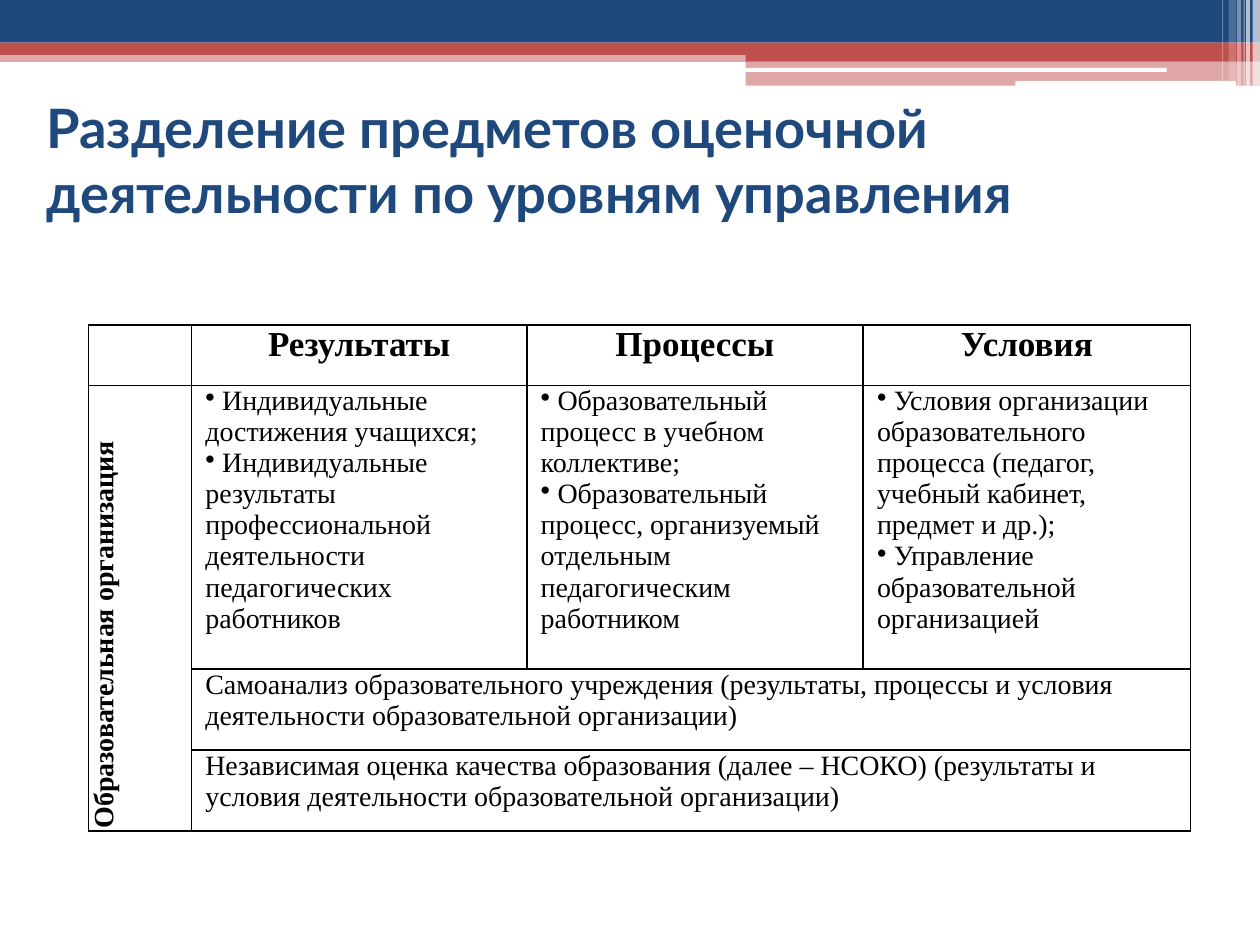
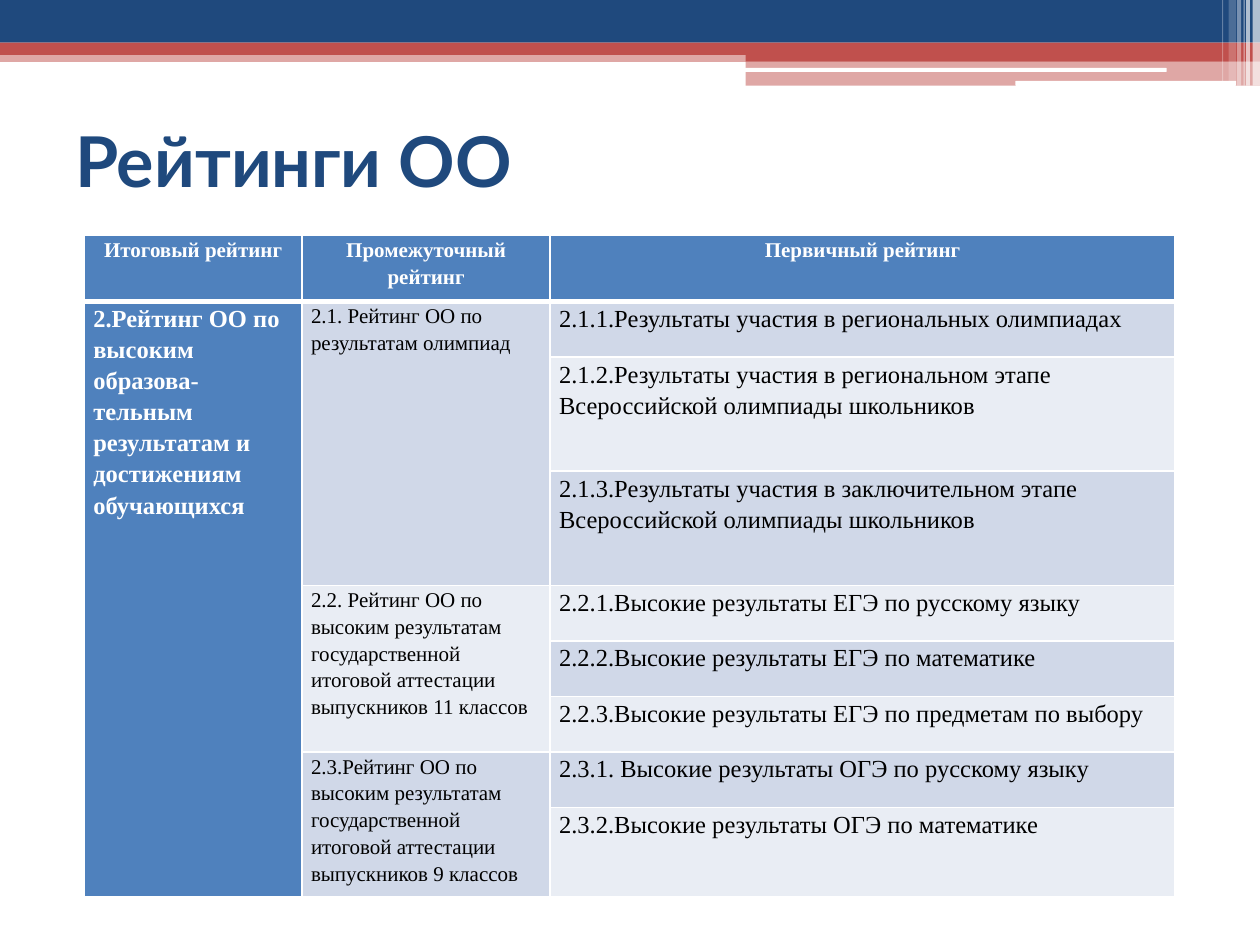
from dataclasses import dataclass
from lxml.etree import SubElement
from pptx import Presentation
from pptx.dml.color import RGBColor
from pptx.enum.shapes import MSO_SHAPE
from pptx.enum.text import MSO_ANCHOR, PP_ALIGN
from pptx.oxml import parse_xml
from pptx.oxml.ns import nsdecls, qn
from pptx.util import Cm, Pt


@dataclass(frozen=True)
class Theme:
    navy: str = "1F497D"
    red: str = "C0504D"
    blue: str = "4F81BD"
    pale: str = "D0D8E8"
    light: str = "E9EDF4"
    white: str = "FFFFFF"
    black: str = "000000"
    head: str = "Lato"
    body: str = "Times New Roman"
    big: int = 40
    title: int = 31
    top: int = 20
    main: int = 16
    text: int = 14
    small: int = 12


T = Theme()


def apply(item, values):
    for name, value in values.items():
        setattr(item, name, value)


def write(par, text, size, font, color, bold):
    run = par.add_run()
    run.text = text
    apply(run.font, {"size": Pt(size), "name": font, "bold": bold})
    run.font.color.rgb = RGBColor.from_string(color)


def bar(slide, box, color, alpha=100, kind=MSO_SHAPE.RECTANGLE):
    shape = slide.shapes.add_shape(kind, *map(Cm, box))
    shape.shadow.inherit = False
    shape.line.fill.background()
    shape.fill.solid()
    shape.fill.fore_color.rgb = RGBColor.from_string(color)
    if alpha < 100:
        node = shape.fill._xPr.find(".//" + qn("a:srgbClr"))
        SubElement(node, qn("a:alpha"), val=str(alpha * 1000))


def band(slide, box):
    left, top, width, high = box
    right = left + width
    half = 10.37
    mid = right - half
    bar(slide, (left, top + 1.02, width, 0.23), T.red, 50)
    bar(slide, (left, top, width, 0.86), T.navy)
    bar(slide, (left, top + 0.86, width, 0.25), T.red)
    bar(slide, (mid, top + 0.99, half, 0.25), T.red)
    bar(slide, (mid, top + 1.24, half, high - 1.24), T.red, 50)
    for gap, drop, wide, thick in ((10.39, 1.37, 8.51, 0.08), (4.93, 1.63, 4.45, 0.1)):
        bar(slide, (right - gap, top + drop, wide, thick), T.white,
            kind=MSO_SHAPE.ROUNDED_RECTANGLE)
    for gap, wide, cut, alpha in (
        (0.15, 0.15, 0, 65), (0.28, 0.08, 0, 65), (0.33, 0.02, 0, 60),
        (0.46, 0.08, 0, 40), (0.63, 0.15, 0.1, 20), (0.76, 0.02, 0.1, 30),
    ):
        bar(slide, (right - gap, top, wide, high - cut), T.white, alpha)


def title(slide, box, text, size):
    frame = slide.shapes.add_textbox(*map(Cm, box)).text_frame
    apply(frame, {"word_wrap": True, "vertical_anchor": MSO_ANCHOR.MIDDLE})
    write(frame.paragraphs[0], text, size, T.head, T.navy, True)


def edge(cell, color, sides):
    props = cell._tc.get_or_add_tcPr()
    for spot, (side, width) in enumerate(sides.items()):
        props.insert(spot, parse_xml(
            f'<a:ln{side} {nsdecls("a")} w="{Pt(width)}"><a:solidFill>'
            f'<a:srgbClr val="{color}"/></a:solidFill></a:ln{side}>'))


def grid(slide, spot, cols, rows, color, rule=1):
    size = sum(cols), sum(rows)
    frame = slide.shapes.add_table(len(rows), len(cols), *map(Cm, (*spot, *size)))
    table = frame.table
    apply(table, {"first_row": False, "horz_banding": False})
    for col, width in zip(table.columns, cols):
        col.width = Cm(width)
    for row, high in zip(table.rows, rows):
        row.height = Cm(high)
    for num, row in enumerate(table.rows):
        for cell in row.cells:
            cell.fill.background()
            edge(cell, color, {"L": 1, "R": 1, "T": rule if num == 1 else 1,
                               "B": rule if num == 0 else 1})
    return table


def put(table, row, col, lines, size, pad, span=(1, 1), fill=None,
        color=T.black, bold=False, indent=0, mark=False, form=None):
    cell = table.cell(row, col)
    if span != (1, 1):
        cell.merge(table.cell(row + span[0] - 1, col + span[1] - 1))
    apply(cell, {"margin_left": Cm(pad), "margin_right": Cm(pad),
                 "margin_top": 0, "margin_bottom": 0})
    if fill:
        for down in range(span[0]):
            paint = table.cell(row + down, col).fill
            paint.solid()
            paint.fore_color.rgb = RGBColor.from_string(fill)
    frame = cell.text_frame
    for num, line in enumerate(lines):
        par = frame.add_paragraph() if num else frame.paragraphs[0]
        props = par._p.get_or_add_pPr()
        if indent:
            apply(props, {})
            props.set("marL", str(Cm(indent)))
            props.set("indent", "0")
        if mark:
            SubElement(props, qn("a:buChar"), char="•")
        apply(par, form or {})
        write(par, " " + line if mark else line, size, T.body, color, bold)
    return cell


def levels(slide, spot):
    table = grid(slide, spot, (2.08, 6.76, 6.78, 6.6), (1.22, 5.72, 1.63, 1.63), T.black)
    pad, indent = 0.05, 0.23
    heads = {
        "Результаты": (
            "Индивидуальные достижения учащихся;",
            "Индивидуальные результаты профессиональной деятельности педагогических работников"),
        "Процессы": (
            "Образовательный процесс в учебном коллективе;",
            "Образовательный процесс, организуемый отдельным педагогическим работником"),
        "Условия": (
            "Условия организации образовательного процесса (педагог, учебный кабинет, предмет и др.);",
            "Управление образовательной организацией"),
    }
    for col, (head, lines) in enumerate(heads.items(), 1):
        put(table, 0, col, [head], T.top, pad, bold=True, form={"alignment": PP_ALIGN.CENTER})
        put(table, 1, col, lines, T.main, pad, indent=indent, mark=True)
    side = put(table, 1, 0, ["Образовательная организация"], T.main, pad, (3, 1), bold=True)
    side.vertical_anchor = MSO_ANCHOR.MIDDLE
    side._tc.get_or_add_tcPr().set("vert", "vert270")
    wide = (
        "Самоанализ образовательного учреждения (результаты, процессы и условия "
        "деятельности образовательной организации)",
        "Независимая оценка качества образования (далее – НСОКО) (результаты и "
        "условия деятельности образовательной организации)",
    )
    for row, line in enumerate(wide, 2):
        put(table, row, 1, [line], T.main, pad, (1, 3), indent=indent)


def ranks(slide, spot):
    rows = (1.33, 1.12, 2.3, 2.3, *[1.12] * 4, 1.55)
    table = grid(slide, spot, (4.39, 5, 12.6), rows, T.white, 3)
    pad = 0.18
    form = {"line_spacing": 1.15}
    tones = T.pale, T.light
    strong = {"fill": T.blue, "color": T.white, "bold": True}
    for col, head in enumerate(("Итоговый рейтинг", "Промежуточный рейтинг", "Первичный рейтинг")):
        put(table, 0, col, [head], T.small, pad, **strong,
            form={**form, "alignment": PP_ALIGN.CENTER})
    put(table, 1, 0, ["2.Рейтинг ОО по высоким образова-тельным результатам и достижениям обучающихся"],
        T.text, pad, (8, 1), **strong, form=form)
    groups = {
        "2.1. Рейтинг ОО по результатам олимпиад": (
            "2.1.1.Результаты участия в региональных олимпиадах",
            "2.1.2.Результаты участия в региональном этапе Всероссийской олимпиады школьников",
            "2.1.3.Результаты участия в заключительном этапе Всероссийской олимпиады школьников"),
        "2.2. Рейтинг ОО по высоким результатам государственной итоговой аттестации выпускников 11 классов": (
            "2.2.1.Высокие результаты ЕГЭ по русскому языку",
            "2.2.2.Высокие результаты ЕГЭ по математике",
            "2.2.3.Высокие результаты ЕГЭ по предметам по выбору"),
        "2.3.Рейтинг ОО по высоким результатам государственной итоговой аттестации выпускников 9 классов": (
            "2.3.1. Высокие результаты ОГЭ по русскому языку",
            "2.3.2.Высокие результаты ОГЭ по математике"),
    }
    row = 1
    for group, lines in groups.items():
        put(table, row, 1, [group], T.small, pad, (len(lines), 1),
            fill=tones[(row - 1) % 2], form=form)
        for line in lines:
            put(table, row, 2, [line], T.text, pad, fill=tones[(row - 1) % 2], form=form)
            row += 1


def main():
    deck = Presentation()
    apply(deck, {"slide_width": Cm(25.4), "slide_height": Cm(19.05)})
    pages = (
        ("Разделение предметов оценочной деятельности по уровням управления",
         T.title, 0.69, levels, (1.78, 6.55)),
        ("Рейтинги ОО", T.big, 1.27, ranks, (1.7, 4.75)),
    )
    for text, size, left, build, spot in pages:
        slide = deck.slides.add_slide(deck.slide_layouts[6])
        band(slide, (0, 0, 25.4, 1.73))
        title(slide, (left, 1.73, 22.86, 2.97), text, size)
        build(slide, spot)
    deck.save("out.pptx")


if __name__ == "__main__":
    main()
